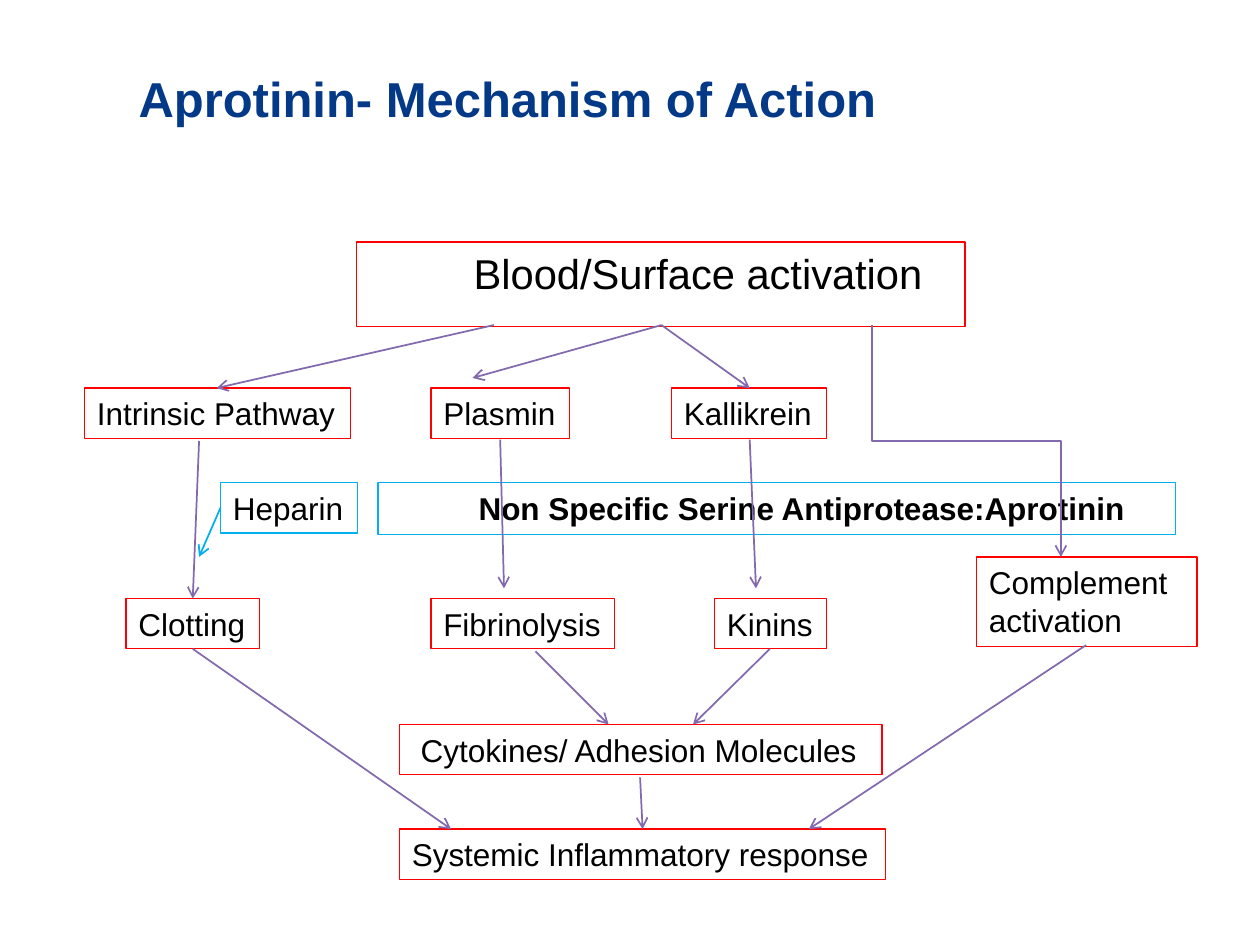
from lxml import etree
from pptx import Presentation
from pptx import util as u
from pptx.dml.color import RGBColor
from pptx.enum import shapes, text
from pptx.oxml import ns

NAVY = RGBColor(0x04, 0x39, 0x88)
BLACK = RGBColor(0, 0, 0)
RED = RGBColor(0xFF, 0, 0)
CYAN = RGBColor(0, 0xB0, 0xF0)
PURPLE = RGBColor(0x83, 0x6A, 0xAE)
FONT = "Arial"

HEADING = "Aprotinin- Mechanism of Action"
TRIGGER = "Blood/Surface activation"

PATHWAY_ROW, INHIBITOR_ROW, EFFECT_ROW = 3.08, 3.83, 4.75
FIXED, FITTED = True, False

# label, left, top, width, height, wrap
MEDIATORS = [
    ("Intrinsic Pathway", 0.67, PATHWAY_ROW, 2.11, 0.4, FIXED),
    ("Plasmin", 3.42, PATHWAY_ROW, 1.1, 0.4, FITTED),
    ("Kallikrein", 5.33, PATHWAY_ROW, 1.23, 0.4, FITTED),
    ("Complement activation", 7.75, 4.42, 1.75, 0.71, FIXED),
    ("Clotting", 1, EFFECT_ROW, 1.06, 0.4, FITTED),
    ("Fibrinolysis", 3.42, EFFECT_ROW, 1.46, 0.4, FITTED),
    ("Kinins", 5.67, EFFECT_ROW, 0.89, 0.4, FITTED),
    ("Cytokines/ Adhesion Molecules", 3.17, 5.75, 3.83, 0.4, FIXED),
    ("Systemic Inflammatory response", 3.17, 6.58, 3.86, 0.4, FITTED),
]
INHIBITORS = [
    ("Non Specific Serine Antiprotease:Aprotinin", 3, INHIBITOR_ROW, 6.33, 0.41, FIXED),
    ("Heparin", 1.75, INHIBITOR_ROW, 1.09, 0.4, FITTED),
]
INDENTS = {"Cytokines/ Adhesion Molecules": 0.07,
           "Non Specific Serine Antiprotease:Aprotinin": 0.7}
BOLD_LABELS = {"Non Specific Serine Antiprotease:Aprotinin"}

CASCADE = [
    ((3.92, 2.58), (1.72, 3.08)),
    ((5.25, 2.58), (3.75, 3)),
    ((5.25, 2.58), (5.95, 3.08)),
    ((8.62, 5.12), (6.42, 6.58)),
    ((1.58, 3.5), (1.53, 4.75)),
    ((3.97, 3.49), (4, 4.67)),
    ((5.95, 3.49), (6, 4.67)),
    ((5.08, 6.17), (5.1, 6.58)),
    ((1.53, 5.15), (3.58, 6.58)),
    ((4.25, 5.17), (4.83, 5.75)),
    ((6.11, 5.15), (5.5, 5.75)),
]
HEPARIN_BLOCK = ((1.75, 4.03), (1.58, 4.42))
COMPLEMENT_BRANCH = ((6.92, 2.58), (8.42, 4.42))


def place(part, left, top, width, height):
    part.left, part.top = u.Inches(left), u.Inches(top)
    part.width, part.height = u.Inches(width), u.Inches(height)


def write(part, label, size, color=BLACK, bold=False, indent=0):
    paragraph = part.text_frame.paragraphs[0]
    paragraph.alignment = text.PP_ALIGN.LEFT
    properties = paragraph._p.get_or_add_pPr()
    properties.set("marL", str(u.Inches(indent)))
    properties.set("indent", "0")
    etree.SubElement(properties, ns.qn("a:buNone"))
    run = paragraph.add_run()
    run.text = label
    run.font.name, run.font.size = FONT, u.Pt(size)
    run.font.bold = bold
    run.font.color.rgb = color


def outline(part, color):
    part.line.color.rgb = color
    part.line.width = u.Pt(0.75)


def add_box(slide, label, left, top, width, height, wrap, color):
    box = slide.shapes.add_textbox(*map(u.Inches, (left, top, width, height)))
    box.text_frame.word_wrap = wrap
    box.text_frame.auto_size = text.MSO_AUTO_SIZE.SHAPE_TO_FIT_TEXT
    outline(box, color)
    write(box, label, 18, bold=label in BOLD_LABELS, indent=INDENTS.get(label, 0))


def add_arrow(slide, start, end, color, kind=shapes.MSO_CONNECTOR.STRAIGHT):
    arrow = slide.shapes.add_connector(kind, *map(u.Inches, start + end))
    arrow.line.color.rgb = color
    arrow.line.width = u.Pt(1)
    etree.SubElement(arrow.line._get_or_add_ln(), ns.qn("a:tailEnd"), type="arrow")
    etree.SubElement(arrow._element.spPr, ns.qn("a:effectLst"))
    return arrow


def add_vertical_elbow(slide, start, end, color):
    (x1, y1), (x2, y2) = start, end
    center_x, center_y = (x1 + x2) / 2, (y1 + y2) / 2
    half_width, half_height = (y2 - y1) / 2, (x2 - x1) / 2
    elbow = add_arrow(slide,
                      (center_x - half_width, center_y - half_height),
                      (center_x + half_width, center_y + half_height),
                      color, shapes.MSO_CONNECTOR.ELBOW)
    frame = elbow._element.spPr.find(ns.qn("a:xfrm"))
    frame.set("rot", str(270 * 60000))
    frame.set("flipH", "1")


def main():
    deck = Presentation()
    deck.slide_width, deck.slide_height = u.Inches(10), u.Inches(7.5)
    slide = deck.slides.add_slide(deck.slide_layouts[1])
    heading, trigger = slide.placeholders

    place(heading, 1, 0.3, 8.5, 0.95)
    heading.text_frame.auto_size = text.MSO_AUTO_SIZE.NONE
    write(heading, HEADING, 28, NAVY, bold=True)

    place(trigger, 2.83, 1.92, 4.83, 0.67)
    trigger.text_frame.auto_size = text.MSO_AUTO_SIZE.NONE
    outline(trigger, RED)
    write(trigger, TRIGGER, 23.8, indent=0.83)

    for boxes, color in ((MEDIATORS, RED), (INHIBITORS, CYAN)):
        for box in boxes:
            add_box(slide, *box, color)

    for start, end in CASCADE:
        add_arrow(slide, start, end, PURPLE)
    add_arrow(slide, *HEPARIN_BLOCK, CYAN)
    add_vertical_elbow(slide, *COMPLEMENT_BRANCH, PURPLE)

    deck.save("out.pptx")


if __name__ == "__main__":
    main()
